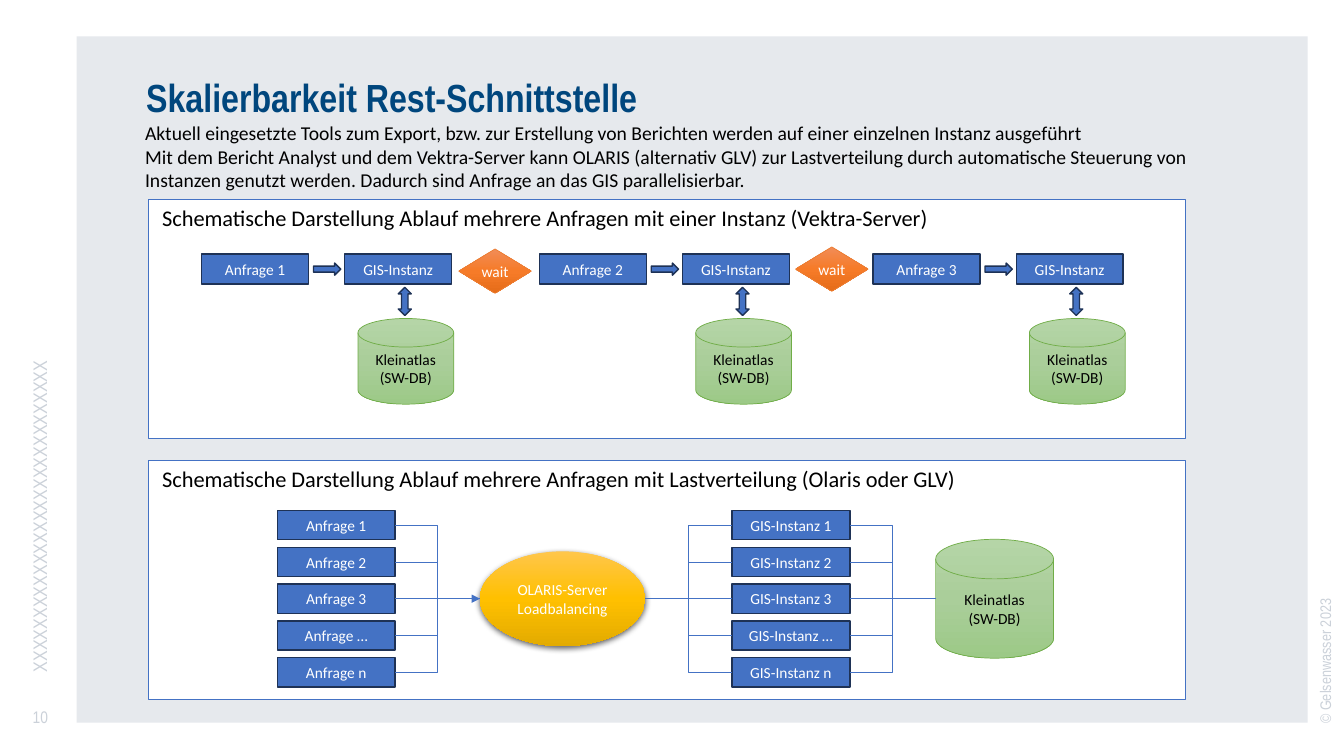
from lxml import etree
from pptx import Presentation
from pptx import util as u
from pptx.dml.color import RGBColor
from pptx.enum import shapes, text
from pptx.oxml import ns

BLUE, NAVY, WHITE, BLACK, PALE = "4472C4", "1E3256", "FFFFFF", "000000", "CBD1D9"
GREENS = ("B5D5A7", "AACE9A", "9CC987")
ORANGES = ("F18C57", "F67B28", "E56C19")
YELLOWS = ("FFC64B", "FFC000", "E3AB00")
DATABASE = "Kleinatlas\n(SW-DB)"
SHAPE = shapes.MSO_SHAPE


def color(value):
    return RGBColor.from_string(value)


def inches(*values):
    return [u.Inches(value) for value in values]


def add_element(parent, tag, **attributes):
    element = etree.SubElement(parent, ns.qn(tag))
    for name, value in attributes.items():
        element.set(name, str(value))
    return element


def write(shape, content, size=11, font="Calibri", hue=BLACK, bold=False,
          align="LEFT", anchor="TOP", inset=(0.1, 0.05), wrap=True, spacing=None):
    """Fill a shape with one paragraph per line of content."""
    frame = shape.text_frame
    frame.word_wrap = wrap
    frame.vertical_anchor = getattr(text.MSO_ANCHOR, anchor)
    frame.margin_left = frame.margin_right = u.Inches(inset[0])
    frame.margin_top = frame.margin_bottom = u.Inches(inset[1])
    frame.text = content
    for para in frame.paragraphs:
        para.alignment = getattr(text.PP_ALIGN, align)
        if spacing:
            para.line_spacing = u.Pt(spacing)
        for span in para.runs:
            span.font.size = u.Pt(size)
            span.font.name = font
            span.font.bold = bold
            span.font.color.rgb = color(hue)


def add_label(page, box, content, rotation=0, **style):
    label = page.shapes.add_textbox(*inches(*box))
    label.rotation = rotation
    write(label, content, **style)


def shade(shape, hues):
    """Vertical gradient through three evenly spaced colours."""
    shape.fill.gradient()
    shape.fill.gradient_angle = 270
    stops = shape.element.spPr.find(".//" + ns.qn("a:gsLst"))
    for stop in list(stops):
        stops.remove(stop)
    for index, hue in enumerate(hues):
        stop = add_element(stops, "a:gs", pos=index * 50000)
        add_element(stop, "a:srgbClr", val=hue)


def add_figure(page, kind, box, fill, outline=None, weight=1, label=None, hue=WHITE):
    figure = page.shapes.add_shape(kind, *inches(*box))
    figure.shadow.inherit = False
    if isinstance(fill, tuple):
        shade(figure, fill)
    else:
        figure.fill.solid()
        figure.fill.fore_color.rgb = color(fill)
    if outline:
        figure.line.color.rgb = color(outline)
        figure.line.width = u.Pt(weight)
    else:
        figure.line.fill.background()
    if label:
        write(figure, label, hue=hue, align="CENTER", anchor="MIDDLE", inset=(0.04, 0.05))
    return figure


def add_step(page, box, label=None, kind=SHAPE.RECTANGLE):
    return add_figure(page, kind, box, BLUE, NAVY, label=label)


def add_database(page, box):
    add_figure(page, SHAPE.FLOWCHART_MAGNETIC_DISK, box, GREENS, "70AD47", 0.5, DATABASE, BLACK)


def add_elbow(page, start, end, source=None, target=None, arrow=False):
    """Elbow line, joined to the right side of source or left side of target."""
    elbow = page.shapes.add_connector(shapes.MSO_CONNECTOR.ELBOW, *inches(*start, *end))
    if source is not None:
        elbow.begin_connect(source, 3)
    if target is not None:
        elbow.end_connect(target, 1)
    elbow.line.color.rgb = color(BLUE)
    elbow.line.width = u.Pt(0.5)
    if arrow:
        add_element(elbow.line._get_or_add_ln(), "a:tailEnd", type="triangle")
    add_element(elbow.element.spPr, "a:effectLst")


def add_panel(page, box, heading):
    left, top, width, height = box
    add_figure(page, SHAPE.RECTANGLE, box, WHITE, BLUE)
    add_label(page, (left + 0.04, top, 8.1, 0.37), heading, size=16, wrap=False)


def add_single_instance(page, box):
    left, top, width, height = box
    add_panel(page, box, "Schematische Darstellung Ablauf mehrere Anfragen "
                         "mit einer Instanz (Vektra-Server)")
    for number, offset in enumerate((0.53, 3.88, 7.19), 1):
        lane = left + offset
        add_step(page, (lane, top + 0.54, 1.06, 0.3), f"Anfrage {number}")
        add_step(page, (lane + 1.42, top + 0.54, 1.06, 0.3), "GIS-Instanz")
        add_step(page, (lane + 1.11, top + 0.63, 0.27, 0.12), kind=SHAPE.RIGHT_ARROW)
        add_step(page, (lane + 1.95, top + 0.87, 0.13, 0.28), kind=SHAPE.UP_DOWN_ARROW)
        add_database(page, (lane + 1.55, top + 1.18, 0.95, 0.85))
    for offset, drop in ((3.08, 0.49), (6.42, 0.47)):
        add_figure(page, SHAPE.FLOWCHART_DECISION, (left + offset, top + drop, 0.72, 0.44),
                   ORANGES, "ED7D31", 0.5, "wait")


def add_stack(page, left, middle, name):
    """Column of five steps centred on the height middle."""
    return [add_step(page, (left, middle - 0.145 + (index - 2) * 0.365, 1.17, 0.29),
                     f"{name} {suffix}")
            for index, suffix in enumerate("123…n")]


def add_load_balancing(page, box):
    left, top, width, height = box
    middle = top + 1.37
    add_panel(page, box, "Schematische Darstellung Ablauf mehrere Anfragen "
                         "mit Lastverteilung (Olaris oder GLV)")
    requests = add_stack(page, left + 1.28, middle, "Anfrage")
    instances = add_stack(page, left + 5.79, middle, "GIS-Instanz")
    add_database(page, (left + 7.81, middle - 0.59, 1.17, 1.18))

    balancer = add_figure(page, SHAPE.OVAL, (left + 3.29, middle - 0.47, 1.64, 0.94),
                          YELLOWS, label="OLARIS-Server\nLoadbalancing")
    effects = balancer.element.spPr.find(ns.qn("a:effectLst"))
    shadow = add_element(effects, "a:outerShdw", blurRad=u.Pt(4.5), dist=u.Pt(1.5),
                         dir=5400000, algn="ctr", rotWithShape=0)
    add_element(add_element(shadow, "a:srgbClr", val=BLACK), "a:alpha", val=63000)

    entry, leave, store = [(left + x, middle) for x in (3.29, 4.93, 7.81)]
    for index, (request, instance) in enumerate(zip(requests, instances)):
        add_elbow(page, entry, entry, source=request, arrow=index == 0)
        add_elbow(page, leave, leave, target=instance)
        add_elbow(page, store, store, source=instance)


def add_frame(page):
    """Backdrop, title, side texts and page number."""
    backdrop = add_figure(page, SHAPE.RECTANGLE, (0.76, 0.36, 12.21, 6.81), "E6E9ED")
    title = page.shapes.title
    title.element.addprevious(backdrop.element)
    title.left, title.top, title.width, title.height = inches(1.45, 0.71, 10.79, 0.61)
    write(title, "Skalierbarkeit Rest-Schnittstelle", size=28, font="Arial Narrow",
          hue="00467D", bold=True, inset=(0, 0), spacing=35)
    side = dict(font="Arial Narrow", hue=PALE, inset=(0, 0))
    add_label(page, (10.9, 4.84, 4.49, 0.19), "© Gelsenwasser 2023", 270, **side)
    add_label(page, (-1.86, 4.3, 4.5, 0.24), "X" * 29, 270, size=14, anchor="MIDDLE", **side)
    add_label(page, (0.17, 6.91, 0.46, 0.4), "10", size=12, align="CENTER",
              anchor="MIDDLE", **side)


def main():
    deck = Presentation()
    deck.slide_width, deck.slide_height = inches(13.33, 7.5)
    page = deck.slides.add_slide(deck.slide_layouts[5])
    add_frame(page)
    add_label(page, (1.34, 1.15, 10.58, 0.81),
              "Aktuell eingesetzte Tools zum Export, bzw. zur Erstellung von Berichten "
              "werden auf einer einzelnen Instanz ausgeführt\n"
              "Mit dem Bericht Analyst und dem Vektra-Server kann OLARIS (alternativ GLV) "
              "zur Lastverteilung durch automatische Steuerung von Instanzen genutzt werden. "
              "Dadurch sind Anfrage an das GIS parallelisierbar.", size=14)
    add_single_instance(page, (1.47, 1.98, 10.29, 2.37))
    add_load_balancing(page, (1.47, 4.57, 10.29, 2.37))
    deck.save("out.pptx")


if __name__ == "__main__":
    main()
